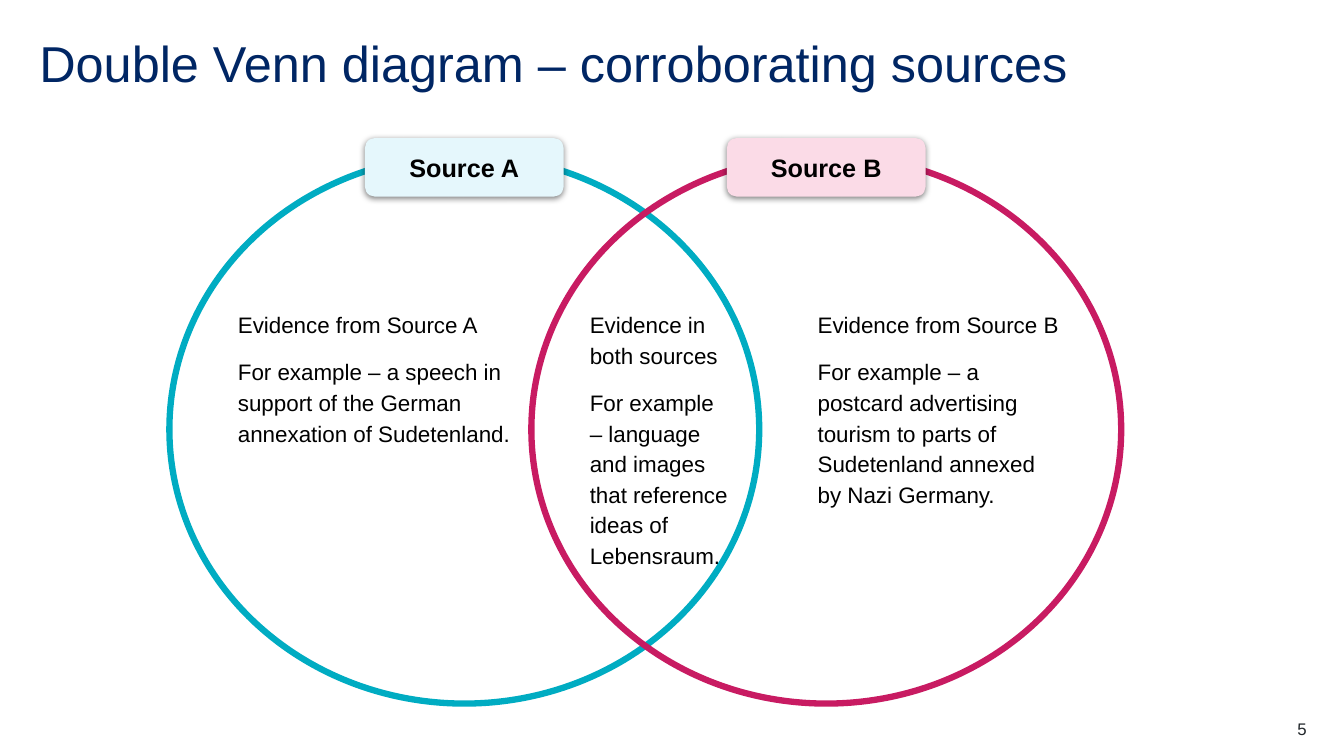
from dataclasses import dataclass

from lxml import etree
from pptx import Presentation
from pptx.dml.color import RGBColor
from pptx.enum.shapes import MSO_SHAPE as Shape
from pptx.enum.text import MSO_ANCHOR as Anchor, PP_ALIGN as Align
from pptx.oxml import parse_xml
from pptx.oxml.ns import nsdecls
from pptx.util import Emu, Pt

PX = 9144  # 100 px to the inch
FONT = "Arial"
BLACK = "000000"


@dataclass
class Note:
    left: int
    width: int
    height: int
    paragraphs: list[str]


@dataclass
class Source:
    name: str
    left: int
    line: str
    fill: str
    note: Note


# Content
CIRCLE_TOP, CIRCLE_W, CIRCLE_H = 154, 585, 544
LABEL_TOP, LABEL_W, LABEL_H = 137, 197, 58
NOTE_TOP, NOTE_INSET = 292, 13

SOURCE_A = Source("Source A", 168, "00ACC2", "E5F7FC", Note(223, 304, 157, [
    "Evidence from Source A",
    "For example – a speech in support of the German annexation of Sudetenland.",
]))
SOURCE_B = Source("Source B", 527, "C81B62", "FBDBE7", Note(798, 266, 227, [
    "Evidence from Source B",
    "For example – a postcard advertising tourism to parts of Sudetenland "
    "annexed by Nazi Germany.",
]))
SHARED = Note(572, 166, 273, [
    "Evidence in both sources",
    "For example – language and images that reference ideas of Lebensraum.",
])


def px(n: int) -> Emu:
    return Emu(n * PX)


def rgb(color: str) -> RGBColor:
    return RGBColor.from_string(color)


def style(p, size: int, color: str, bold: bool = False, align=Align.LEFT) -> None:
    p.font.name, p.font.size, p.font.bold = FONT, Pt(size), bold
    p.font.color.rgb = rgb(color)
    p.alignment = align


def add_text(slide, left: int, top: int, width: int, height: int, inset: int = 0):
    tf = slide.shapes.add_textbox(px(left), px(top), px(width), px(height)).text_frame
    tf.word_wrap = True
    tf.margin_left = tf.margin_top = tf.margin_right = tf.margin_bottom = px(inset)
    return tf


def add_shadow(sp) -> None:
    sp.shadow.inherit = False
    effects = sp._element.spPr.find("{*}effectLst")
    effects.append(parse_xml(
        f'<a:outerShdw {nsdecls("a")} blurRad="{Pt(4.5)}" dist="{Pt(1.5)}" '
        'dir="5400000" algn="t" rotWithShape="0"><a:srgbClr val="000000">'
        '<a:alpha val="50000"/></a:srgbClr></a:outerShdw>'))


def add_note(slide, note: Note) -> None:
    tf = add_text(slide, note.left, NOTE_TOP, note.width, note.height, NOTE_INSET)
    for i, text in enumerate(note.paragraphs):
        p = tf.add_paragraph() if i else tf.paragraphs[0]
        p.text = text
        p.line_spacing, p.space_after = 1.14, Pt(12)
        style(p, 16, BLACK)


def add_source(slide, source: Source) -> None:
    # Circle
    sp = slide.shapes.add_shape(
        Shape.OVAL, px(source.left), px(CIRCLE_TOP), px(CIRCLE_W), px(CIRCLE_H))
    sp.shadow.inherit = False
    sp.fill.background()
    sp.line.color.rgb, sp.line.width = rgb(source.line), Pt(4.5)

    # Label centred over the circle
    left = source.left + (CIRCLE_W - LABEL_W) // 2
    sp = slide.shapes.add_shape(
        Shape.ROUNDED_RECTANGLE, px(left), px(LABEL_TOP), px(LABEL_W), px(LABEL_H))
    add_shadow(sp)
    sp.fill.solid()
    sp.fill.fore_color.rgb = rgb(source.fill)
    sp.line.fill.background()
    tf = sp.text_frame
    tf.vertical_anchor = Anchor.MIDDLE
    p = tf.paragraphs[0]
    p.text = source.name
    style(p, 18, BLACK, bold=True, align=Align.CENTER)

    add_note(slide, source.note)


def main() -> None:
    prs = Presentation()
    prs.slide_width, prs.slide_height = px(1333), px(750)
    slide = prs.slides.add_slide(prs.slide_layouts[6])

    # Title
    p = add_text(slide, 39, 39, 1256, 60).paragraphs[0]
    p.text = "Double Venn diagram – corroborating sources"
    p.line_spacing = 0.9
    style(p, 36, "002664")

    # Venn diagram
    add_source(slide, SOURCE_A)
    add_note(slide, SHARED)
    add_source(slide, SOURCE_B)

    # Slide number
    p = add_text(slide, 1217, 713, 79, 20).paragraphs[0]
    p.text = "5"
    style(p, 12, "22272B", align=Align.RIGHT)

    prs.save("out.pptx")


if __name__ == "__main__":
    main()
